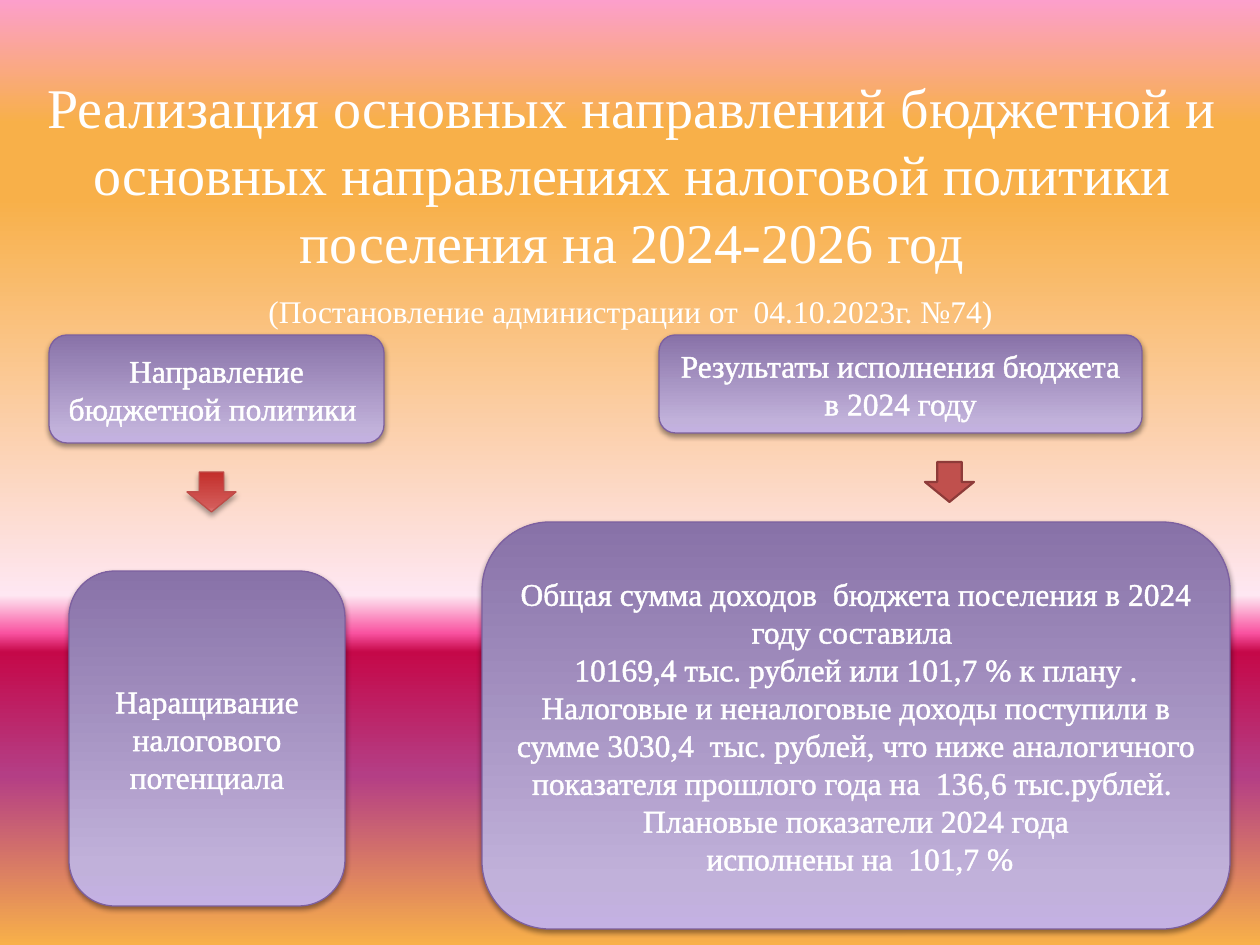
from lxml.etree import SubElement as Sub
from pptx import Presentation
from pptx.dml.color import RGBColor as RGB
from pptx.enum.shapes import MSO_SHAPE as Kind
from pptx.enum.text import MSO_ANCHOR as Anchor, PP_ALIGN as Align
from pptx.oxml.ns import qn
from pptx.util import Emu, Pt

FONT = "Times New Roman"
WHITE = RGB(0xFF, 0xFF, 0xFF)
BLACK = RGB(0, 0, 0)
PLUM = RGB(0x7D, 0x60, 0xA0)
RUST = RGB(0xBF, 0x4C, 0x48)
RED = RGB(0xC0, 0x50, 0x4D)
WINE = RGB(0x8E, 0x3B, 0x39)
PINK = RGB(0xFC, 0x9F, 0xCB)
GOLD = RGB(0xF8, 0xB0, 0x49)
BLUSH = RGB(0xFE, 0xE7, 0xF2)
ROSE = RGB(0xF9, 0x52, 0xA0)
RUBY = RGB(0xC5, 0x08, 0x49)
BERRY = RGB(0xB4, 0x3E, 0x85)

SKY = [(0, PINK), (13, GOLD), (21, GOLD), (63, BLUSH),
       (67, ROSE), (69, RUBY), (82, BERRY), (100, GOLD)]
LILAC = [(0, RGB(0xC4, 0xB1, 0xE3)), (12, RGB(0xC1, 0xB1, 0xDA)),
         (100, RGB(0x88, 0x72, 0xA8))]
CORAL = [(0, RGB(0xE3, 0x7F, 0x7D)), (12, RGB(0xD3, 0x5B, 0x59)),
         (100, RGB(0xC3, 0x2F, 0x2B))]


def px(n):
    return Emu(round(n * 914400 / 126))


def blend(fill, root, stops, angle):
    """Fill with a linear gradient; the angle runs counter-clockwise."""
    fill.gradient()
    fill.gradient_angle = angle
    group = root.find(".//" + qn("a:gsLst"))
    for old in list(group):
        group.remove(old)
    for pos, color in stops:
        stop = Sub(group, qn("a:gs"), pos=str(pos * 1000))
        Sub(stop, qn("a:srgbClr"), val=str(color))


def shade(shape, alpha, dist):
    """Drop a soft black shadow straight down."""
    effects = shape.element.spPr.find(qn("a:effectLst"))
    drop = Sub(effects, qn("a:outerShdw"), blurRad=str(Pt(3.1)),
               dist=str(Pt(dist)), dir="5400000", rotWithShape="0")
    tint = Sub(drop, qn("a:srgbClr"), val=str(BLACK))
    Sub(tint, qn("a:alpha"), val=str(alpha * 1000))


def write(shape, *lines, size=18, align=Align.CENTER, anchor=Anchor.MIDDLE,
          edge=None):
    frame = shape.text_frame
    frame.word_wrap = True
    frame.vertical_anchor = anchor
    for i, line in enumerate(lines):
        para = frame.add_paragraph() if i else frame.paragraphs[0]
        para.alignment = align
        run = para.add_run()
        run.text = line
        font = run.font
        font.name, font.size = FONT, Pt(size)
        font.color.rgb = WHITE
        if edge:
            props = run._r.get_or_add_rPr()
            line_el = Sub(props, qn("a:ln"), w=str(Pt(edge)))
            paint = Sub(line_el, qn("a:solidFill"))
            Sub(paint, qn("a:srgbClr"), val=str(WHITE))
            props.insert(0, line_el)


def form(slide, kind, box, fill, line, width=0.75):
    """Add a preset shape; fill is one colour or a list of stops."""
    shape = slide.shapes.add_shape(kind, *map(px, box))
    if isinstance(fill, list):
        blend(shape.fill, shape.element.spPr, fill, 90)
    else:
        shape.fill.solid()
        shape.fill.fore_color.rgb = fill
    shape.line.color.rgb = line
    shape.line.width = Pt(width)
    shape.shadow.inherit = False
    return shape


def card(slide, box, *lines):
    shape = form(slide, Kind.ROUNDED_RECTANGLE, box, LILAC, PLUM)
    shade(shape, 38, 1.6)
    write(shape, *lines, edge=0.83)


def head(slide, x, y, w):
    title = slide.shapes.add_textbox(px(x), px(y), px(w), px(223))
    write(title, "Реализация основных направлений бюджетной и основных "
          "направлениях налоговой политики поселения на 2024-2026 год", size=32)
    note = slide.shapes.add_textbox(px(x + 222), px(y + 224), px(906), px(51))
    write(note, "(Постановление администрации от  04.10.2023г. №74)",
          align=Align.LEFT, anchor=Anchor.TOP)


def policy(slide, x, y):
    card(slide, (x, y, 335, 108), "Направление бюджетной политики ")
    card(slide, (x + 20, y + 236, 276, 335),
         "Наращивание налогового потенциала")
    arrow = form(slide, Kind.DOWN_ARROW, (x + 138, y + 137, 49, 40),
                 CORAL, RUST)
    shade(arrow, 35, 1.8)


def results(slide, x, y):
    card(slide, (x + 177, y, 483, 98),
         "Результаты исполнения бюджета в 2024 году")
    card(slide, (x, y + 187, 748, 407),
         "Общая сумма доходов  бюджета поселения в 2024 году составила ",
         "10169,4 тыс. рублей или 101,7 % к плану . Налоговые и неналоговые "
         "доходы поступили в сумме 3030,4  тыс. рублей, что ниже аналогичного "
         "показателя прошлого года на  136,6 тыс.рублей. ",
         "Плановые показатели 2024 года",
         " исполнены на  101,7 %")
    form(slide, Kind.DOWN_ARROW, (x + 443, y + 127, 49, 40), RED, WINE, 1.25)


def main():
    deck = Presentation()
    deck.slide_width, deck.slide_height = px(1260), px(945)
    slide = deck.slides.add_slide(deck.slide_layouts[6])
    blend(slide.background.fill, slide.element, SKY, 270)
    head(slide, 34, 62, 1197)
    policy(slide, 49, 335)
    results(slide, 482, 335)
    deck.save("out.pptx")


if __name__ == "__main__":
    main()
